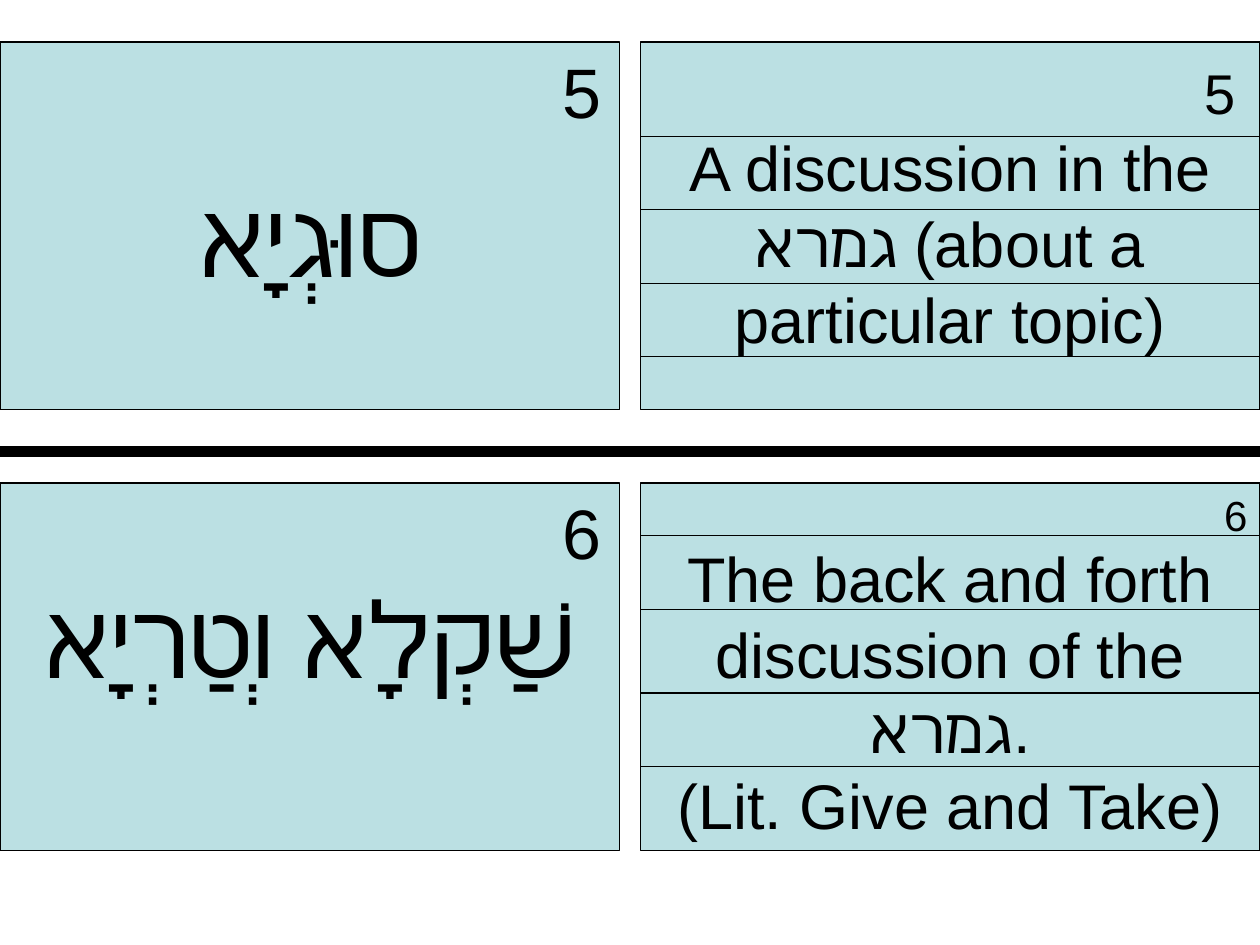
from dataclasses import dataclass

from lxml.etree import SubElement
from pptx import Presentation
from pptx.dml.color import RGBColor
from pptx.enum.shapes import MSO_CONNECTOR, MSO_SHAPE
from pptx.enum.text import MSO_ANCHOR, PP_ALIGN
from pptx.oxml.ns import qn
from pptx.util import Cm, Pt


@dataclass(frozen=True)
class Theme:
    font: str = "Arial"
    ink: RGBColor = RGBColor(0x00, 0x00, 0x00)
    card: RGBColor = RGBColor(0xBB, 0xE0, 0xE3)
    number: int = 40
    term: int = 60
    definition: int = 36
    rule: float = 0.75
    divider: float = 6


THEME = Theme()
SLIDE_WIDTH, SLIDE_HEIGHT = 25.4, 19.05
CARD_WIDTH, CARD_HEIGHT = 12.49, 7.41
BACK_LEFT = SLIDE_WIDTH - CARD_WIDTH
ROW_TOPS = (0.85, 9.74)


def write(paragraph, text, *, size, align=PP_ALIGN.CENTER, before=0, after=0,
          line_height=None):
    paragraph.alignment = align
    paragraph.space_before, paragraph.space_after = Pt(before), Pt(after)
    if line_height:
        paragraph.line_spacing = Pt(line_height)
    run = paragraph.add_run()
    run.text = text
    run.font.name = THEME.font
    run.font.size = Pt(size)
    run.font.color.rgb = THEME.ink


class FlashcardSlide:
    def __init__(self, theme, slide):
        self.theme = theme
        self.slide = slide

    def card(self, left, top, paragraphs, inset):
        """Draw a card; paragraphs are (text, format) pairs."""
        card = self.slide.shapes.add_shape(
            MSO_SHAPE.RECTANGLE, Cm(left), Cm(top), Cm(CARD_WIDTH), Cm(CARD_HEIGHT))
        card.shadow.inherit = False
        card.fill.solid()
        card.fill.fore_color.rgb = self.theme.card
        card.line.color.rgb = self.theme.ink
        card.line.width = Pt(self.theme.rule)

        frame = card.text_frame
        frame.word_wrap = True
        frame.vertical_anchor = MSO_ANCHOR.TOP
        frame.margin_left = frame.margin_right = Cm(inset)
        for index, (text, style) in enumerate(paragraphs):
            paragraph = frame.add_paragraph() if index else frame.paragraphs[0]
            write(paragraph, text, **style)

    def rule(self, left, y, width):
        rule = self.slide.shapes.add_connector(
            MSO_CONNECTOR.STRAIGHT, Cm(left), Cm(y), Cm(SLIDE_WIDTH), Cm(y))
        rule.line.color.rgb = self.theme.ink
        rule.line.width = Pt(width)
        SubElement(rule._element.spPr, qn("a:effectLst"))


def main():
    deck = Presentation()
    deck.slide_width, deck.slide_height = Cm(SLIDE_WIDTH), Cm(SLIDE_HEIGHT)
    page = FlashcardSlide(THEME, deck.slides.add_slide(deck.slide_layouts[6]))

    number = dict(size=THEME.number, align=PP_ALIGN.RIGHT)
    definition = dict(size=THEME.definition)
    flashcards = [
        dict(
            front=[("5", number), ("סוּגְיָא", dict(size=THEME.term, before=23))],
            back=[("5", number | dict(size=32, line_height=44, after=2)),
                  ("A discussion in the גמרא (about a particular topic)", definition)],
            back_inset=0.49,
            rules=(2.75, 4.23, 5.71, 7.19),
        ),
        dict(
            front=[("6", number), ("שַׁקְלָא וְטַרְיָא", dict(size=THEME.term))],
            back=[("6", number | dict(size=24)),
                  ("The back and forth discussion of the גמרא.", definition),
                  ("(Lit. Give and Take)", definition)],
            back_inset=0.25,
            rules=(10.8, 12.28, 13.97, 15.45),
        ),
    ]

    # Cards: term on the left, ruled definition on the right
    for top, flashcard in zip(ROW_TOPS, flashcards):
        page.card(0, top, flashcard["front"], inset=0.37)
        page.card(BACK_LEFT, top, flashcard["back"], flashcard["back_inset"])
        for y in flashcard["rules"]:
            page.rule(BACK_LEFT, y, THEME.rule)

    # Divider between the two rows
    page.rule(0, 9.1, THEME.divider)

    deck.save("out.pptx")


if __name__ == "__main__":
    main()
